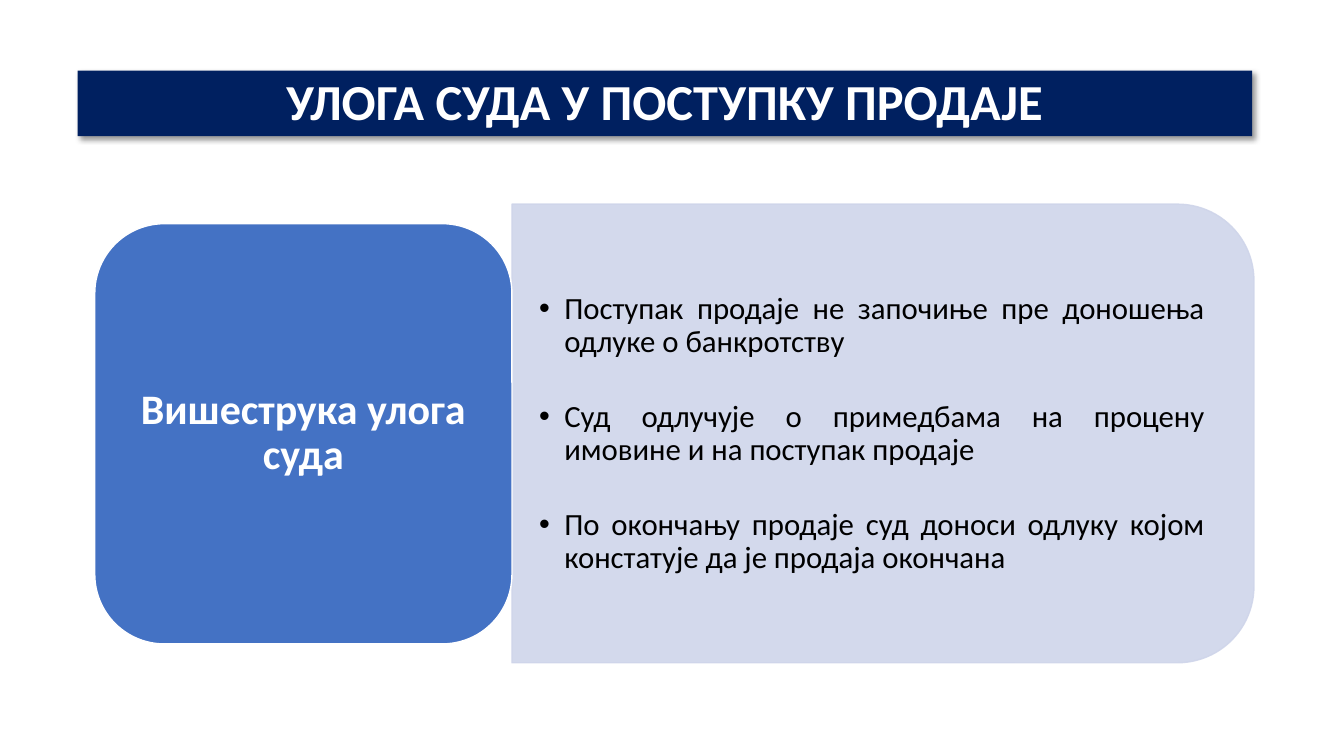
from lxml import etree
from pptx import Presentation
from pptx.dml.color import RGBColor
from pptx.enum import shapes, text
from pptx.oxml.ns import qn
from pptx.util import Pt

TITLE = "УЛОГА СУДА У ПОСТУПКУ ПРОДАЈЕ"
ROLE = "Вишеструка улога суда"
POINTS = [
    "Поступак продаје не започиње пре доношења одлуке о банкротству",
    "Суд одлучује о примедбама на процену имовине и на поступак продаје",
    "По окончању продаје суд доноси одлуку којом констатује да је продаја окончана",
]

THEME = dict(
    font="Calibri", title_size=36, role_size=30, point_size=22,
    navy="002060", blue="4472C4", pale="CFD5EA", white="FFFFFF", black="000000",
)

# left, top, width, height as seen on the slide
TITLE_BAR = (55.4, 50.4, 839, 46.8)
ROLE_BOX = (67.7, 159.8, 298, 300.2)
ROLE_TEXT = (82.1, 174.2, 269.3, 270.7)
PANEL = (365.7, 145.8, 530, 327.6)
PANEL_TEXT = (365.7, 162, 514.1, 295.9)
POINT_GAP = 29.6
BULLET_INDENT = 18


def sub(parent, tag, **attrs):
    return etree.SubElement(parent, qn(tag), {k: str(v) for k, v in attrs.items()})


def rgb(name):
    return RGBColor.from_string(THEME[name])


def add_block(slide, kind, box, fill, line=None):
    sp = slide.shapes.add_shape(kind, *map(Pt, box))
    sp.shadow.inherit = False
    sp.fill.solid()
    sp.fill.fore_color.rgb = rgb(fill)
    if line:
        sp.line.color.rgb = rgb(line)
        sp.line.width = Pt(1)
    else:
        sp.line.fill.background()
    return sp


def add_shadow(sp):
    effects = sp._element.spPr.find(qn("a:effectLst"))
    shadow = sub(effects, "a:outerShdw", blurRad=Pt(4), dist=Pt(3),
                 dir=45 * 60000, algn="tl", rotWithShape=0)
    sub(sub(shadow, "a:srgbClr", val=THEME["black"]), "a:alpha", val=40000)


def write(sp, lines, size, color, bold=False, align="CENTER", anchor="MIDDLE",
          insets=(7.2, 3.6), gap=0, bullet=False):
    tf = sp.text_frame
    tf.word_wrap = True
    tf.vertical_anchor = text.MSO_ANCHOR[anchor]
    tf.margin_left = tf.margin_right = Pt(insets[0])
    tf.margin_top = tf.margin_bottom = Pt(insets[1])
    for i, line in enumerate(lines):
        p = tf.paragraphs[0] if i == 0 else tf.add_paragraph()
        p.alignment = text.PP_ALIGN[align]
        p.line_spacing = 0.9
        if i:
            p.space_before = Pt(gap)
        if bullet:
            pPr = p._p.get_or_add_pPr()
            pPr.set("marL", str(Pt(BULLET_INDENT)))
            pPr.set("indent", str(-Pt(BULLET_INDENT)))
            sub(pPr, "a:buFont", typeface="Arial")
            sub(pPr, "a:buChar", char="•")
        r = p.add_run()
        r.text = line
        r.font.name = THEME["font"]
        r.font.size = Pt(THEME[size])
        r.font.bold = bold
        r.font.color.rgb = rgb(color)


def add_panel(slide):
    """Pale panel, turned a quarter so that its round corners face right."""
    left, top, width, height = PANEL
    shift = (width - height) / 2
    sp = add_block(slide, shapes.MSO_SHAPE.ROUND_2_SAME_RECTANGLE,
                   (left + shift, top - shift, height, width), "pale", "pale")
    sp.rotation = 90
    for color in sp._element.spPr.iter(qn("a:srgbClr")):
        sub(color, "a:alpha", val=90000)


def main():
    prs = Presentation()
    prs.slide_width, prs.slide_height = Pt(960), Pt(540)
    slide = prs.slides.add_slide(prs.slide_layouts[6])

    add_panel(slide)
    write(slide.shapes.add_textbox(*map(Pt, PANEL_TEXT)), POINTS, "point_size", "black",
          align="JUSTIFY", insets=(19.4, 10), gap=POINT_GAP, bullet=True)

    add_block(slide, shapes.MSO_SHAPE.ROUNDED_RECTANGLE, ROLE_BOX, "blue", "white")
    write(slide.shapes.add_textbox(*map(Pt, ROLE_TEXT)), [ROLE], "role_size", "white",
          bold=True, insets=(8.6, 4.3))

    bar = add_block(slide, shapes.MSO_SHAPE.RECTANGLE, TITLE_BAR, "navy")
    add_shadow(bar)
    write(bar, [TITLE], "title_size", "white", bold=True, anchor="BOTTOM")

    prs.save("out.pptx")


if __name__ == "__main__":
    main()
